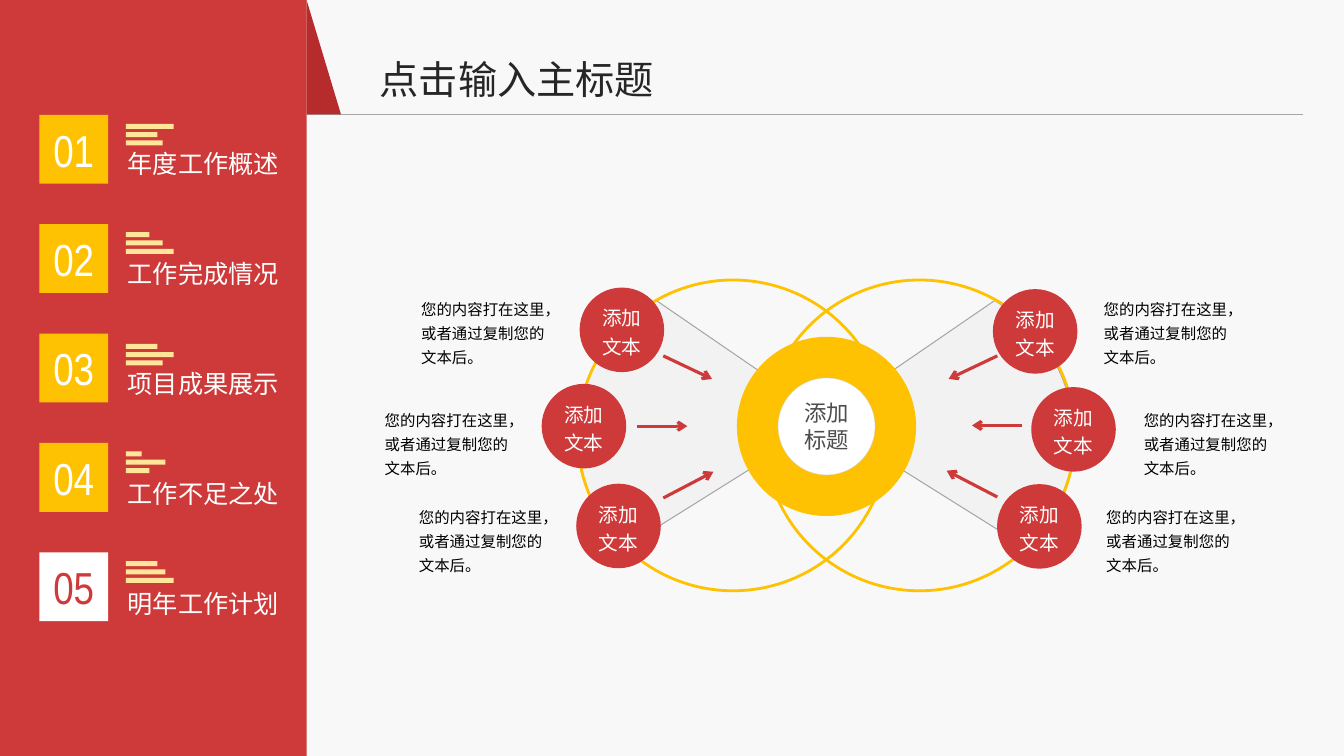
from lxml.etree import SubElement
from pptx import Presentation
from pptx.dml.color import RGBColor
from pptx.enum.shapes import MSO_CONNECTOR, MSO_SHAPE
from pptx.enum.text import MSO_ANCHOR, MSO_AUTO_SIZE, PP_ALIGN
from pptx.oxml.ns import qn
from pptx.util import Pt

RED = RGBColor(0xCE, 0x3A, 0x3A)
DARK_RED = RGBColor(0xB6, 0x2C, 0x2C)
YELLOW = RGBColor(0xFE, 0xC2, 0x02)
PALE_YELLOW = RGBColor(0xFF, 0xE6, 0x99)
WHITE = RGBColor(0xFF, 0xFF, 0xFF)
BLACK = RGBColor(0, 0, 0)
OFF_WHITE = RGBColor(0xF8, 0xF8, 0xF8)
PALE_GREY = RGBColor(0xF2, 0xF2, 0xF2)
LIGHT_GREY = RGBColor(0xD7, 0xD7, 0xD7)
GREY = RGBColor(0xA6, 0xA6, 0xA6)
TITLE_GREY = RGBColor(0x26, 0x26, 0x26)
HUB_GREY = RGBColor(0x4D, 0x4D, 0x4D)
CJK_FONT = "Noto Sans CJK SC"

presentation = Presentation()
presentation.slide_width, presentation.slide_height = Pt(960), Pt(540)
slide = presentation.slides.add_slide(presentation.slide_layouts[6])
shapes = slide.shapes


def add_filled(kind, left, top, width, height, fill, line=None, weight=0.75):
    """Add a preset shape; a fill or line of None is left out."""
    shape = shapes.add_shape(kind, Pt(left), Pt(top), Pt(width), Pt(height))
    shape.shadow.inherit = False
    if fill is None:
        shape.fill.background()
    else:
        shape.fill.solid()
        shape.fill.fore_color.rgb = fill
    if line is None:
        shape.line.fill.background()
    else:
        shape.line.color.rgb = line
        shape.line.width = Pt(weight)
    return shape


def write(shape, text, size, font, color, align=PP_ALIGN.LEFT, spacing=None):
    """Put one styled run into the shape's first paragraph."""
    paragraph = shape.text_frame.paragraphs[0]
    paragraph.alignment = align
    paragraph.line_spacing = spacing
    run = paragraph.add_run()
    run.text = text
    run.font.size = Pt(size)
    run.font.name = font
    run.font.color.rgb = color
    SubElement(run.font._element, qn("a:ea"), typeface=CJK_FONT)


# Background, side panel and header
add_filled(MSO_SHAPE.RECTANGLE, 124, 0, 836, 540, OFF_WHITE)
header_line = shapes.add_connector(MSO_CONNECTOR.STRAIGHT, Pt(219), Pt(81.8), Pt(930.8), Pt(81.8))
header_line.line.color.rgb = GREY
header_line.line.width = Pt(0.75)
SubElement(header_line._element.spPr, qn("a:effectLst"))
add_filled(MSO_SHAPE.RECTANGLE, 0, 0, 219, 540, RED)
add_filled(MSO_SHAPE.RIGHT_TRIANGLE, 219, 0, 24.6, 81.8, DARK_RED)

# Side menu: label, first bar top, three bar widths
menu = [
    ("年度工作概述", 88.4, (34, 22.5, 26.2)),
    ("工作完成情况", 165.8, (16.8, 26.2, 34)),
    ("项目成果展示", 245.6, (22.5, 34, 26.2)),
    ("工作不足之处", 322.4, (11.2, 28.1, 16.8)),
    ("明年工作计划", 400.8, (22.5, 28.1, 34)),
]
labels = [(84.2, 102.2 + 78.7 * row, 124, 29, label, 18, WHITE)
          for row, (label, _, _) in enumerate(menu)]
labels.append((264.2, 36, 212.4, 41, "点击输入主标题", 28, TITLE_GREY))
for left, top, width, height, label, size, color in labels:
    label_box = shapes.add_textbox(Pt(left), Pt(top), Pt(width), Pt(height))
    label_box.text_frame.word_wrap = False
    label_box.text_frame.auto_size = MSO_AUTO_SIZE.SHAPE_TO_FIT_TEXT
    write(label_box, label, size, CJK_FONT, color)

for row, (_, bar_top, bar_widths) in enumerate(menu):
    for bar, bar_width in enumerate(bar_widths):
        add_filled(MSO_SHAPE.RECTANGLE, 90, bar_top + 5.95 * bar, bar_width, 3.6, PALE_YELLOW)
    current = row == len(menu) - 1
    tile = add_filled(MSO_SHAPE.RECTANGLE, 28.1, 82 + 78.14 * row, 49.2, 49.2,
                      WHITE if current else YELLOW)
    tile.text_frame.vertical_anchor = MSO_ANCHOR.MIDDLE
    write(tile, f"{row + 1:02}", 32, "Arial Narrow", RED if current else WHITE, PP_ALIGN.CENTER)

# Two mirrored fans: a tip, two straight sides and a curved outer edge
FAN_MIRROR = 1179.4
fan_tip = (586.8, 299.5)
fan_curves = [
    [(733, 391), (769, 347), (765.4, 331.9), (766.8, 309.6)],
    [(766.8, 309.6), (766.1, 290.9), (761.8, 271.4), (751, 254.9)],
    [(751, 254.9), (733.7, 231.1), (738, 232.6), (710.6, 214.6)],
]
fan_outline = []
for curve in fan_curves:
    for step in range(13):
        t = step / 12
        weights = ((1 - t) ** 3, 3 * t * (1 - t) ** 2, 3 * t ** 2 * (1 - t), t ** 3)
        fan_outline.append(tuple(sum(w * point[axis] for w, point in zip(weights, curve))
                                 for axis in (0, 1)))
for mirrored in (False, True):
    outline = [(Pt(FAN_MIRROR - x if mirrored else x), Pt(y)) for x, y in [fan_tip] + fan_outline]
    builder = shapes.build_freeform(*outline[0])
    builder.add_line_segments(outline[1:], close=True)
    fan = builder.convert_to_shape()
    fan.shadow.inherit = False
    fan.fill.solid()
    fan.fill.fore_color.rgb = PALE_GREY
    fan.line.color.rgb = GREY
    fan.line.width = Pt(0.75)

for ring_left in (412.6, 545.8):
    add_filled(MSO_SHAPE.OVAL, ring_left, 200, 222, 222, None, YELLOW, 2)

arrows = [
    (473.8, 254.2, 508.6, 270.7), (455, 304.4, 491, 304.4), (473.8, 355.7, 509.6, 337),
    (712.4, 355, 676.2, 336.2), (730, 303.9, 694.3, 303.9), (712.4, 254.2, 677.6, 270.7),
]
for start_x, start_y, end_x, end_y in arrows:
    arrow = shapes.add_connector(MSO_CONNECTOR.STRAIGHT, Pt(start_x), Pt(start_y), Pt(end_x), Pt(end_y))
    arrow.line.color.rgb = RED
    arrow.line.width = Pt(2.25)
    SubElement(arrow.line._get_or_add_ln(), qn("a:tailEnd"), type="arrow")
    SubElement(arrow._element.spPr, qn("a:effectLst"))

# Hub
add_filled(MSO_SHAPE.OVAL, 526.4, 240.6, 128, 128, YELLOW)
hub = add_filled(MSO_SHAPE.OVAL, 555.8, 270, 69.2, 69.2, WHITE, LIGHT_GREY, 0.25)
hub.text_frame.vertical_anchor = MSO_ANCHOR.MIDDLE
write(hub, "添加标题", 16, "Roboto Condensed", HUB_GREY, PP_ALIGN.CENTER)

# Nodes with their notes: node left, node top, note left, note top
nodes = [
    (414, 205.4, 295.2, 207.5), (709.2, 206.5, 782.8, 207.5),
    (386.9, 274.2, 269.2, 287), (736.6, 276.5, 811.4, 287),
    (411.6, 345.5, 293.6, 356.4), (712.2, 345.8, 784.6, 356.4),
]
for node_left, node_top, note_left, note_top in nodes:
    node = add_filled(MSO_SHAPE.OVAL, node_left, node_top, 60.4, 60.4, RED)
    node.text_frame.vertical_anchor = MSO_ANCHOR.MIDDLE
    note = shapes.add_textbox(Pt(note_left), Pt(note_top), Pt(105), Pt(57.6))
    for shape in (node, note):
        frame = shape.text_frame
        frame.word_wrap = True
        frame.margin_left = frame.margin_right = Pt(5.6)
        frame.margin_top = frame.margin_bottom = Pt(2.8)
    note.text_frame.auto_size = MSO_AUTO_SIZE.SHAPE_TO_FIT_TEXT
    write(node, "添加文本", 14, "Arial", WHITE, PP_ALIGN.CENTER, 1.2)
    write(note, "您的内容打在这里，或者通过复制您的文本后。", 11, CJK_FONT, BLACK, spacing=1.3)

presentation.save("out.pptx")
